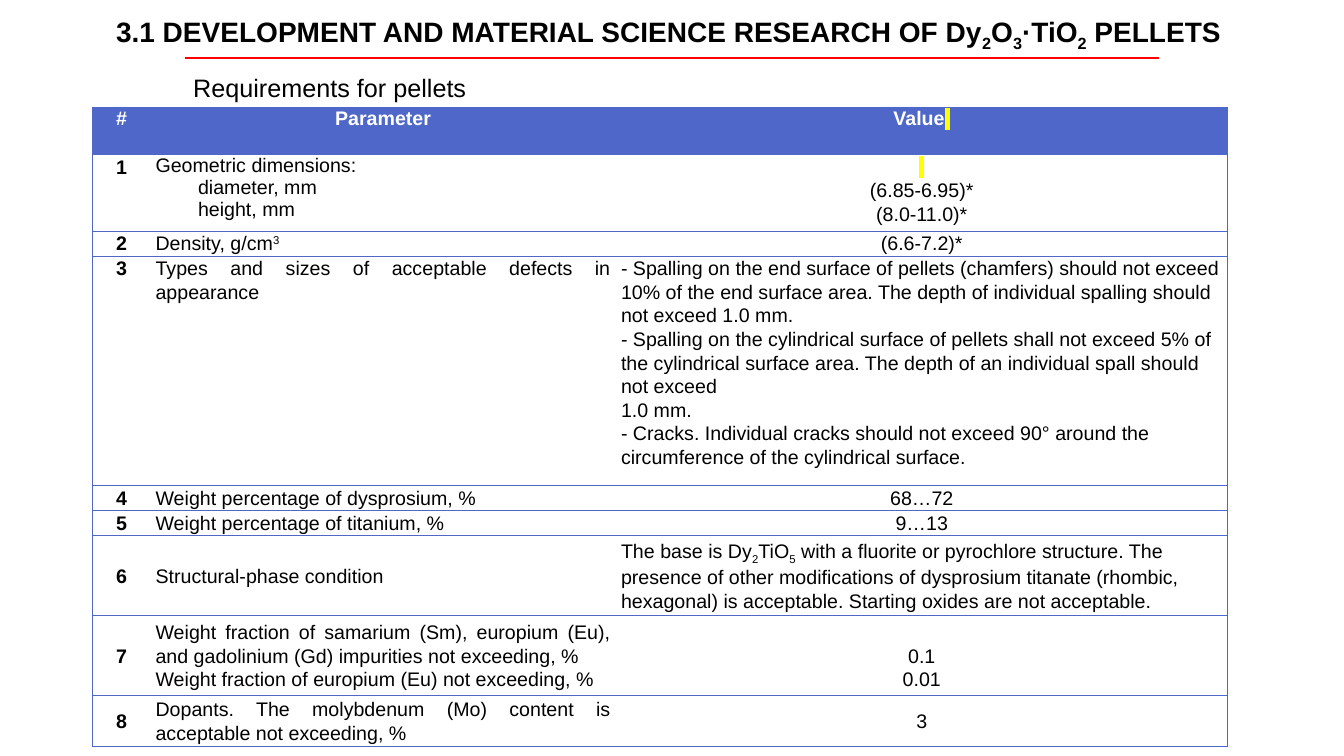
from dataclasses import dataclass, replace

from lxml import etree
from pptx import Presentation
from pptx import util as u
from pptx.dml.color import RGBColor
from pptx.enum import shapes, text
from pptx.oxml import ns

BLACK = RGBColor(0x00, 0x00, 0x00)
WHITE = RGBColor(0xFF, 0xFF, 0xFF)
BLUE = RGBColor(0x4E, 0x67, 0xC8)
RED = RGBColor(0xFF, 0x00, 0x00)
YELLOW = RGBColor(0xFF, 0xFF, 0x00)

LEFT = text.PP_ALIGN.LEFT
CENTER = text.PP_ALIGN.CENTER
JUSTIFY = text.PP_ALIGN.JUSTIFY
TOP = text.MSO_ANCHOR.TOP
MIDDLE = text.MSO_ANCHOR.MIDDLE
LINE_SPACING = 1.07
SUBSCRIPT, SUPERSCRIPT = -25000, 30000
COLUMN_WIDTHS = (1.45, 11.73, 15.42)


@dataclass(frozen=True)
class Span:
    words: str
    baseline: int = 0
    highlight: RGBColor | None = None


@dataclass(frozen=True)
class Para:
    spans: tuple[Span, ...]
    align: text.PP_ALIGN = LEFT
    spacing: float = LINE_SPACING
    first_indent: float = 0


@dataclass(frozen=True)
class Style:
    size: int
    bold: bool = False
    color: RGBColor = BLACK


@dataclass(frozen=True)
class Row:
    height: float
    parameter: tuple[Para, ...]
    value: tuple[Para, ...]
    anchor: text.MSO_ANCHOR = MIDDLE
    value_top: float = 0


def plain(words: str, align: text.PP_ALIGN = LEFT, spacing: float = LINE_SPACING,
          first_indent: float = 0) -> Para:
    return Para((Span(words),), align, spacing, first_indent)


def paras(align: text.PP_ALIGN, *lines: str) -> tuple[Para, ...]:
    return tuple(plain(line, align) for line in lines)


MARK = Span(" ", highlight=YELLOW)
TITLE = Para((
    Span("3.1 DEVELOPMENT AND MATERIAL SCIENCE RESEARCH OF Dy"), Span("2", SUBSCRIPT),
    Span("O"), Span("3", SUBSCRIPT), Span("·TiO"), Span("2", SUBSCRIPT), Span(" PELLETS"),
), CENTER, 1.0)
HEADER_HEIGHT = 1.18
HEADER = (
    plain("#", CENTER, 1.0),
    plain("Parameter", CENTER, 1.0),
    Para((Span("Value"), MARK), CENTER, 1.0),
)
ROWS = (
    Row(1.93,
        (plain("Geometric dimensions:", spacing=1.0),
         plain("diameter, mm", spacing=1.0, first_indent=1.07),
         plain("height, mm", spacing=1.0, first_indent=1.07)),
        (Para((MARK,), CENTER), *paras(CENTER, "(6.85-6.95)*", "(8.0-11.0)*")), TOP),
    Row(0.63,
        (Para((Span("Density, g/cm"), Span("3", SUPERSCRIPT)), JUSTIFY),),
        paras(CENTER, "(6.6-7.2)*"), TOP),
    Row(5.77,
        paras(JUSTIFY, "Types and sizes of acceptable defects in appearance"),
        paras(LEFT,
              "- Spalling on the end surface of pellets (chamfers) should not exceed 10% of "
              "the end surface area. The depth of individual spalling should not exceed 1.0 mm.",
              "- Spalling on the cylindrical surface of pellets shall not exceed 5% of the "
              "cylindrical surface area. The depth of an individual spall should not exceed\n"
              "1.0 mm.",
              "- Cracks. Individual cracks should not exceed 90° around the circumference of "
              "the cylindrical surface."), TOP),
    Row(0.63, paras(JUSTIFY, "Weight percentage of dysprosium, %"), paras(CENTER, "68…72")),
    Row(0.63, paras(JUSTIFY, "Weight percentage of titanium, %"), paras(CENTER, "9…13")),
    Row(2.01,
        paras(JUSTIFY, "Structural-phase condition"),
        (Para((Span("The base is Dy"), Span("2", SUBSCRIPT), Span("TiO"), Span("5", SUBSCRIPT),
               Span(" with a fluorite or pyrochlore structure. The presence of other "
                    "modifications of dysprosium titanate (rhombic, hexagonal) is acceptable. "
                    "Starting oxides are not acceptable."))),)),
    Row(2.01,
        paras(JUSTIFY,
              "Weight fraction of samarium (Sm), europium (Eu), and gadolinium (Gd) "
              "impurities not exceeding, %",
              "Weight fraction of europium (Eu) not exceeding, %"),
        paras(CENTER, "0.1", "0.01"), value_top=0.61),
    Row(1.3,
        paras(JUSTIFY, "Dopants. The molybdenum (Mo) content is acceptable not exceeding, %"),
        paras(CENTER, "3")),
)


def add_color(parent: etree._Element, tag: str, color: RGBColor) -> etree._Element:
    """Add a child that holds one RGB colour."""
    holder = etree.SubElement(parent, ns.qn(tag))
    etree.SubElement(holder, ns.qn("a:srgbClr"), val=str(color))
    return holder


def add_span(para, span: Span, style: Style) -> None:
    for number, line in enumerate(span.words.split("\n")):
        if number:
            para.add_line_break()
        run = para.add_run()
        run.text = line
        formats = {"name": "Arial", "size": u.Pt(style.size), "bold": style.bold}
        for name, value in formats.items():
            setattr(run.font, name, value)
        run.font.color.rgb = style.color
        properties = run.font._element
        if span.baseline:
            properties.set("baseline", str(span.baseline))
        if span.highlight is not None:
            mark = add_color(properties, "a:highlight", span.highlight)
            properties.find(ns.qn("a:latin")).addprevious(mark)


def write(frame, content: tuple[Para, ...], style: Style) -> None:
    for number, item in enumerate(content):
        para = frame.add_paragraph() if number else frame.paragraphs[0]
        para.alignment = item.align
        para.line_spacing = item.spacing
        if item.first_indent:
            para._p.get_or_add_pPr().set("indent", str(u.Cm(item.first_indent)))
        for span in item.spans:
            add_span(para, span, style)


def add_text(page, bounds: tuple[float, ...], para: Para, style: Style, wrap: bool) -> None:
    box = page.shapes.add_textbox(*map(u.Cm, bounds))
    box.text_frame.word_wrap = wrap
    box.text_frame.auto_size = text.MSO_AUTO_SIZE.SHAPE_TO_FIT_TEXT
    write(box.text_frame, (para,), style)


def set_borders(cell, column: int) -> None:
    """Rule every row, and close the table at its outer sides only."""
    properties = cell._tc.get_or_add_tcPr()
    edges = {"L": column == 0, "R": column == len(COLUMN_WIDTHS) - 1, "T": True, "B": True}
    for position, (side, visible) in enumerate(edges.items()):
        line = etree.Element(ns.qn(f"a:ln{side}"), w=str(u.Pt(0.75)))
        if visible:
            add_color(line, "a:solidFill", BLUE)
        else:
            etree.SubElement(line, ns.qn("a:noFill"))
        properties.insert(position, line)


def fill_cell(cell, column: int, content: tuple[Para, ...], style: Style,
              anchor: text.MSO_ANCHOR = TOP, top: float = 0) -> None:
    formats = {"margin_left": u.Cm(0.13), "margin_right": u.Cm(0.13), "margin_top": u.Cm(top),
               "margin_bottom": 0, "vertical_anchor": anchor}
    for name, value in formats.items():
        setattr(cell, name, value)
    write(cell.text_frame, content, style)
    set_borders(cell, column)


def add_requirements(page) -> None:
    heights = (HEADER_HEIGHT, *(row.height for row in ROWS))
    table = page.shapes.add_table(len(heights), len(COLUMN_WIDTHS), u.Cm(2.34), u.Cm(2.72),
                                  u.Cm(sum(COLUMN_WIDTHS)), u.Cm(sum(heights))).table
    table.horz_banding = False
    for column, width in zip(table.columns, COLUMN_WIDTHS):
        column.width = u.Cm(width)
    for row, height in zip(table.rows, heights):
        row.height = u.Cm(height)

    body = Style(14)
    heading = replace(body, bold=True, color=WHITE)
    for column, para in enumerate(HEADER):
        cell = table.cell(0, column)
        cell.fill.solid()
        cell.fill.fore_color.rgb = BLUE
        fill_cell(cell, column, (para,), heading)
    for number, row in enumerate(ROWS, start=1):
        cells = [table.cell(number, column) for column in range(len(COLUMN_WIDTHS))]
        for cell in cells:
            cell.fill.background()
        fill_cell(cells[0], 0, paras(CENTER, str(number)), replace(body, bold=True), row.anchor)
        fill_cell(cells[1], 1, row.parameter, body, row.anchor)
        fill_cell(cells[2], 2, row.value, body, row.anchor, row.value_top)


def add_title_rule(page) -> None:
    rule = page.shapes.add_connector(shapes.MSO_CONNECTOR.STRAIGHT,
                                     u.Cm(4.65), u.Cm(1.47), u.Cm(29.21), u.Cm(1.47))
    rule.line.color.rgb = RED
    rule.line.width = u.Pt(1.5)
    etree.SubElement(rule._element.spPr, ns.qn("a:effectLst"))


def main() -> None:
    deck = Presentation()
    deck.slide_width, deck.slide_height = u.Cm(33.87), u.Cm(19.05)
    page = deck.slides.add_slide(deck.slide_layouts[6])
    add_text(page, (2.34, 0.25, 29.01, 1.11), TITLE, Style(20, bold=True), wrap=True)
    add_text(page, (4.62, 1.7, 7.47, 1.03), plain("Requirements for pellets", spacing=1.0),
             Style(18), wrap=False)
    add_requirements(page)
    add_title_rule(page)
    deck.save("out.pptx")


if __name__ == "__main__":
    main()
